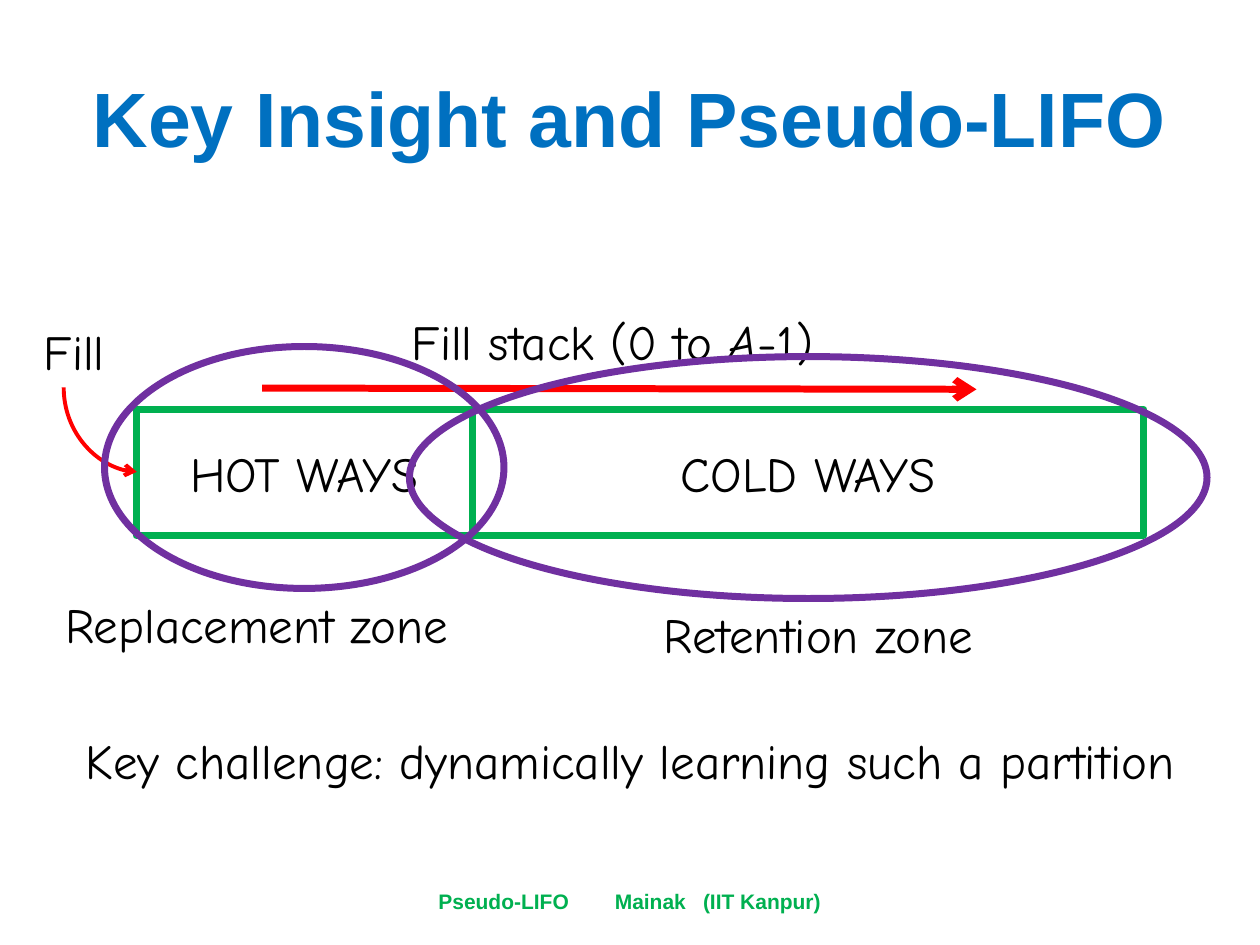
from dataclasses import dataclass

from lxml import etree
from pptx import Presentation
from pptx.dml.color import RGBColor
from pptx.enum import shapes, text
from pptx.oxml.ns import qn
from pptx.util import Inches, Pt


@dataclass(frozen=True)
class Theme:
    heading_font: str = "Arial"
    body_font: str = "Comic Neue"
    title_size: float = 44
    body_size: float = 28
    footer_size: float = 12
    heavy_line: float = 4
    light_line: float = 2.25
    blue: RGBColor = RGBColor(0x00, 0x70, 0xC0)
    green: RGBColor = RGBColor(0x00, 0xB0, 0x50)
    red: RGBColor = RGBColor(0xFF, 0x00, 0x00)
    purple: RGBColor = RGBColor(0x70, 0x30, 0xA0)
    black: RGBColor = RGBColor(0x00, 0x00, 0x00)


THEME = Theme()


@dataclass(frozen=True)
class Box:
    left: float
    top: float
    width: float
    height: float

    def lengths(self):
        return [Inches(v) for v in (self.left, self.top, self.width, self.height)]


@dataclass(frozen=True)
class Style:
    font: str
    size: float
    color: RGBColor
    bold: bool = False


TITLE = Style(THEME.heading_font, THEME.title_size, THEME.blue, True)
FOOTER = Style(THEME.heading_font, THEME.footer_size, THEME.green, True)
BODY = Style(THEME.body_font, THEME.body_size, THEME.black)


@dataclass(frozen=True)
class Run:
    text: str
    italic: bool = False


@dataclass(frozen=True)
class Label:
    box: Box
    runs: tuple[Run, ...]
    style: Style = BODY
    align: text.PP_ALIGN = text.PP_ALIGN.LEFT
    anchor: text.MSO_ANCHOR = text.MSO_ANCHOR.TOP
    wrap: bool = False


@dataclass(frozen=True)
class Outline:
    kind: shapes.MSO_SHAPE
    box: Box
    color: RGBColor
    caption: str = ""


def write_runs(paragraph, runs: tuple[Run, ...], style: Style) -> None:
    for part in runs:
        run = paragraph.add_run()
        run.text = part.text
        run.font.name = style.font
        run.font.size = Pt(style.size)
        run.font.color.rgb = style.color
        run.font.bold = style.bold
        run.font.italic = part.italic


def add_label(slide, label: Label):
    shape = slide.shapes.add_textbox(*label.box.lengths())
    frame = shape.text_frame
    frame.word_wrap = label.wrap
    frame.vertical_anchor = label.anchor
    paragraph = frame.paragraphs[0]
    paragraph.alignment = label.align
    write_runs(paragraph, label.runs, label.style)
    return shape


def add_footer(slide, label: Label, inset: float, stops: tuple[float, ...]) -> None:
    """Place the footer's parts at tab stops measured from its left inset."""
    frame = add_label(slide, label).text_frame
    frame.margin_left = Inches(inset)
    properties = frame.paragraphs[0]._p.get_or_add_pPr()
    tabs = etree.SubElement(properties, qn("a:tabLst"))
    for stop in stops:
        etree.SubElement(tabs, qn("a:tab"), pos=str(Inches(stop)), algn="l")


def add_outline(slide, outline: Outline) -> None:
    shape = slide.shapes.add_shape(outline.kind, *outline.box.lengths())
    shape.shadow.inherit = False
    shape.fill.background()
    shape.line.color.rgb = outline.color
    shape.line.width = Pt(THEME.heavy_line)
    if outline.caption:
        frame = shape.text_frame
        frame.vertical_anchor = text.MSO_ANCHOR.MIDDLE
        paragraph = frame.paragraphs[0]
        paragraph.alignment = text.PP_ALIGN.CENTER
        write_runs(paragraph, (Run(outline.caption),), BODY)


def add_arrow(slide, kind: shapes.MSO_CONNECTOR, start: tuple[float, float],
              end: tuple[float, float], width: float):
    points = [Inches(v) for v in (*start, *end)]
    arrow = slide.shapes.add_connector(kind, *points)
    arrow.line.color.rgb = THEME.red
    arrow.line.width = Pt(width)
    properties = arrow._element.spPr
    etree.SubElement(properties.find(qn("a:ln")), qn("a:tailEnd"), type="arrow")
    etree.SubElement(properties, qn("a:effectLst"))
    return arrow


def add_fill_arrow(slide) -> None:
    """Draw the quarter bend from "Fill" down and right into the hot ways."""
    arrow = add_arrow(slide, shapes.MSO_CONNECTOR.CURVE, (1.13, 3.12), (0.46, 3.7),
                      THEME.light_line)
    properties = arrow._element.spPr
    properties.find(qn("a:prstGeom")).set("prst", "curvedConnector2")
    properties.find(qn("a:xfrm")).set("rot", str(270 * 60000))


def main() -> None:
    presentation = Presentation()
    presentation.slide_width = Inches(10)
    presentation.slide_height = Inches(7.5)
    slide = presentation.slides.add_slide(presentation.slide_layouts[6])

    center, middle = text.PP_ALIGN.CENTER, text.MSO_ANCHOR.MIDDLE
    rectangle, oval = shapes.MSO_SHAPE.RECTANGLE, shapes.MSO_SHAPE.OVAL

    add_label(slide, Label(Box(0.5, 0.3, 9, 1.25), (Run("Key Insight and Pseudo-LIFO"),),
                           TITLE, center, middle, True))
    add_footer(slide, Label(Box(2.83, 6.95, 4.33, 0.4),
                            (Run("Pseudo-LIFO\tMainak\t(IIT Kanpur)"),),
                            FOOTER, anchor=middle, wrap=True),
               inset=0.65, stops=(1.4, 2.1))

    for ways in (
        Outline(rectangle, Box(1.08, 3.25, 2.67, 1), THEME.green, "HOT WAYS"),
        Outline(rectangle, Box(3.75, 3.25, 5.33, 1), THEME.green, "COLD WAYS"),
    ):
        add_outline(slide, ways)

    add_label(slide, Label(Box(0.25, 2.5, 0.76, 0.57), (Run("Fill"),)))
    add_fill_arrow(slide)
    add_label(slide, Label(Box(3.17, 2.42, 3.77, 0.57),
                           (Run("Fill stack (0 to "), Run("A", True), Run("-1)"))))
    add_arrow(slide, shapes.MSO_CONNECTOR.STRAIGHT, (2.08, 3.08), (7.75, 3.09),
              THEME.heavy_line)

    for zone in (
        Outline(oval, Box(0.83, 2.75, 3.17, 1.92), THEME.purple),
        Outline(oval, Box(3.25, 2.83, 6.33, 1.92), THEME.purple),
    ):
        add_outline(slide, zone)

    for label in (
        Label(Box(0.42, 4.67, 3.56, 0.57), (Run("Replacement zone"),)),
        Label(Box(5.17, 4.75, 3, 0.57), (Run("Retention zone"),)),
        Label(Box(0, 5.75, 10, 0.57),
              (Run("Key challenge: dynamically learning such a partition"),),
              align=center, wrap=True),
    ):
        add_label(slide, label)

    presentation.save("out.pptx")


if __name__ == "__main__":
    main()
